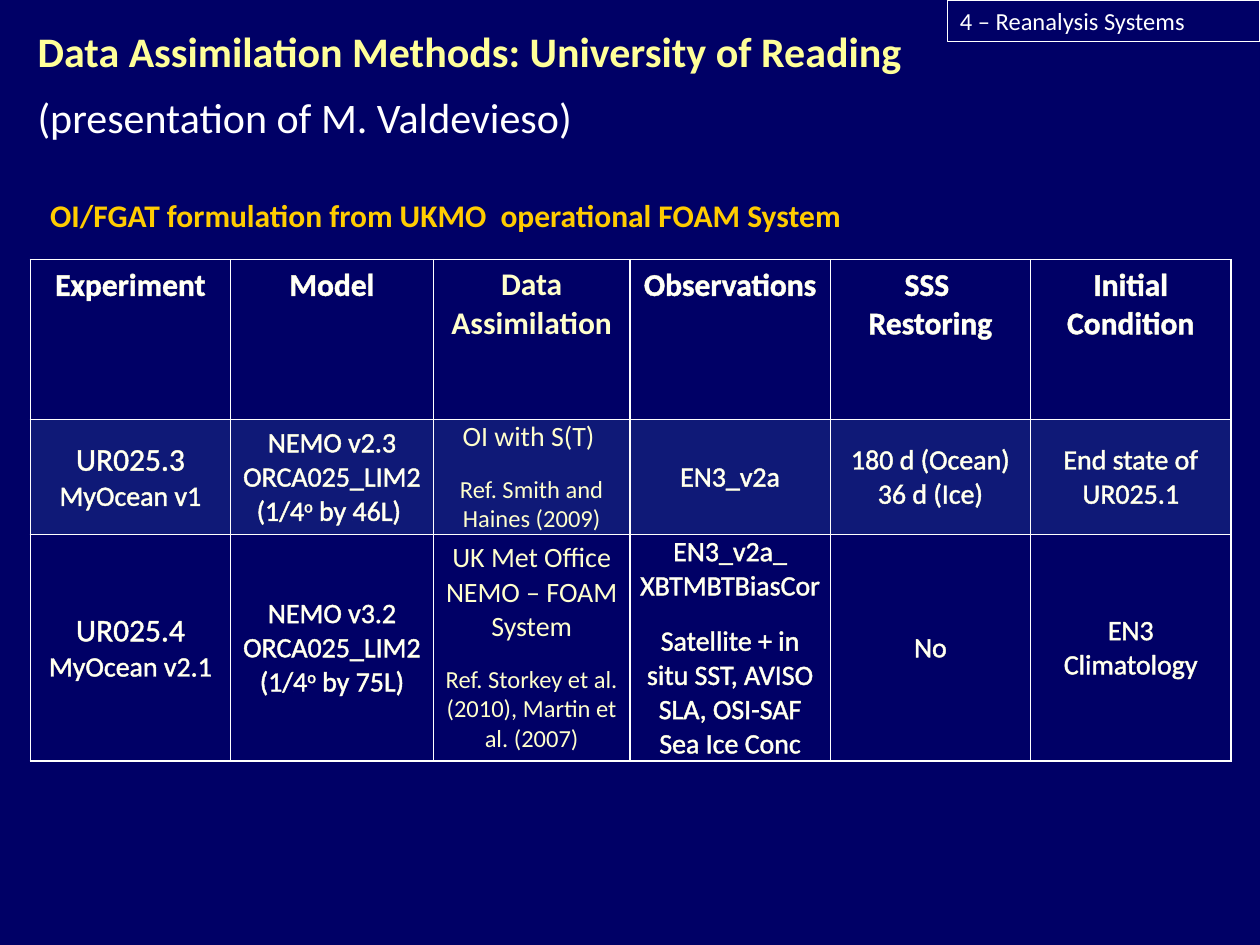
"""Build the slide on data assimilation methods at the University of Reading."""
import pptx
import pptx.util
import pptx.dml.color
import pptx.enum.shapes
import pptx.enum.text
import pptx.oxml
import pptx.oxml.ns

Inches, Pt = pptx.util.Inches, pptx.util.Pt
RGBColor = pptx.dml.color.RGBColor
ALIGN = pptx.enum.text.PP_ALIGN
ANCHOR = pptx.enum.text.MSO_ANCHOR

NAVY = RGBColor(0x00, 0x00, 0x66)
WHITE = RGBColor(0xFF, 0xFF, 0xFF)
CREAM = RGBColor(0xFF, 0xFF, 0xCC)
LEMON = RGBColor(0xFF, 0xFF, 0x99)
GOLD = RGBColor(0xFF, 0xCC, 0x00)
BLUE = RGBColor(0x4F, 0x81, 0xBD)


def add_run(para, text, size, color, bold=False):
    run = para.add_run()
    run.text = text
    run.font.name = "Calibri"
    run.font.size = Pt(size)
    run.font.bold = bold
    run.font.color.rgb = color
    return run


def make_line(tag, width, color):
    return pptx.oxml.parse_xml(
        f'<a:{tag} {pptx.oxml.ns.nsdecls("a")} w="{Pt(width)}"><a:solidFill>'
        f'<a:srgbClr val="{color}"/></a:solidFill></a:{tag}>')


deck = pptx.Presentation()
deck.slide_width, deck.slide_height = Inches(10), Inches(7.5)
slide = deck.slides.add_slide(deck.slide_layouts[6])
slide.background.fill.solid()
slide.background.fill.fore_color.rgb = NAVY

heads = [["Experiment"], ["Model"], ["Data Assimilation"], ["Observations"],
         ["SSS ", "Restoring"], ["Initial Condition"]]
first = [
    [[("UR025.3 ", 18), ("MyOcean v1", 16)]],
    [[("NEMO v2.3 ORCA025_LIM2(1/4", 16), ("o", 16), (" by 46L) ", 16)]],
    [[("OI with S(T) ", 16)], [("Ref. Smith and Haines (2009)", 14)]],
    [[("EN3_v2a", 16)]],
    [[("180 d (Ocean) 36 d (Ice)", 16)]],
    [[("End state of UR025.1", 16)]],
]
second = [
    [[("UR025.4 ", 18), ("MyOcean v2.1", 16)]],
    [[("NEMO v3.2 ORCA025_LIM2 (1/4", 16), ("o", 16), (" by 75L)", 16)]],
    [[("UK Met Office NEMO – FOAM System", 16)],
     [("Ref. Storkey et al. (2010), Martin et al. (2007)", 14)]],
    [[("EN3_v2a_ XBTMBTBiasCor", 16)],
     [("Satellite + in situ SST, AVISO SLA, OSI-SAF Sea Ice Conc", 16)]],
    [[("No", 16)]],
    [[("EN3 Climatology", 16)]],
]
rows = [[[[(text, 18)] for text in head] for head in heads], first, second]

table = slide.shapes.add_table(
    3, 6, Inches(0.24), Inches(2.06), Inches(9.53), Inches(3.47)).table
table.first_row = table.horz_banding = False
for col, width in zip(table.columns, [1.59, 1.61, 1.56, 1.59, 1.59, 1.59]):
    col.width = Inches(width)
for row, height in zip(table.rows, [1.27, 0.74, 1.46]):
    row.height = Inches(height)

for r, row in enumerate(rows):
    for c, paras in enumerate(row):
        cell = table.cell(r, c)
        if r:
            cell.vertical_anchor = ANCHOR.MIDDLE
            cell.margin_left = cell.margin_right = Inches(0.07)
            cell.margin_top = cell.margin_bottom = 0
        for n, runs in enumerate(paras):
            frame = cell.text_frame
            para = frame.add_paragraph() if n else frame.paragraphs[0]
            para.alignment = ALIGN.CENTER
            if r:
                para.space_after = Pt(6)
                if n:
                    para.space_before = Pt(6)
            for text, size in runs:
                color = CREAM if c == 2 else WHITE
                run = add_run(para, text, size, color, r == 0)
                props = run.font._element
                props.insert(0, make_line("ln", 0.75, CREAM))
                if text == "o":
                    props.set("baseline", "30000")
        if r == 1:
            cell.fill.solid()
            cell.fill.fore_color.rgb = BLUE
            shade = cell._tc.tcPr.find(".//" + pptx.oxml.ns.qn("a:srgbClr"))
            shade.append(pptx.oxml.parse_xml(
                f'<a:alpha {pptx.oxml.ns.nsdecls("a")} val="20000"/>'))
        else:
            cell.fill.background()
        for n, tag in enumerate(["lnL", "lnR", "lnT", "lnB"]):
            cell._tc.tcPr.insert(n, make_line(tag, 1, WHITE))

title = slide.shapes.add_textbox(
    Inches(0.2), Inches(0.15), Inches(9.64), Inches(1.03)).text_frame
title.word_wrap = True
add_run(title.paragraphs[0], "Data Assimilation Methods: University of Reading",
        24, LEMON, True)
para = title.add_paragraph()
para.space_before = Pt(9)
add_run(para, "(presentation of M. Valdevieso)", 24, WHITE)

label = slide.shapes.add_shape(
    pptx.enum.shapes.MSO_SHAPE.RECTANGLE,
    Inches(7.52), 0, Inches(2.48), Inches(0.33))
label.shadow.inherit = False
label.fill.background()
label.line.color.rgb = WHITE
label.line.width = Pt(0.75)
label.text_frame.word_wrap = True
label.text_frame.vertical_anchor = ANCHOR.TOP
para = label.text_frame.paragraphs[0]
para.alignment = ALIGN.LEFT
add_run(para, "4 – Reanalysis Systems", 14, WHITE)

note = slide.shapes.add_textbox(
    Inches(0.3), Inches(1.51), Inches(8.9), Inches(0.4)).text_frame
note.word_wrap = True
add_run(note.paragraphs[0],
        "OI/FGAT formulation from UKMO  operational FOAM System", 18, GOLD, True)

deck.save("out.pptx")
